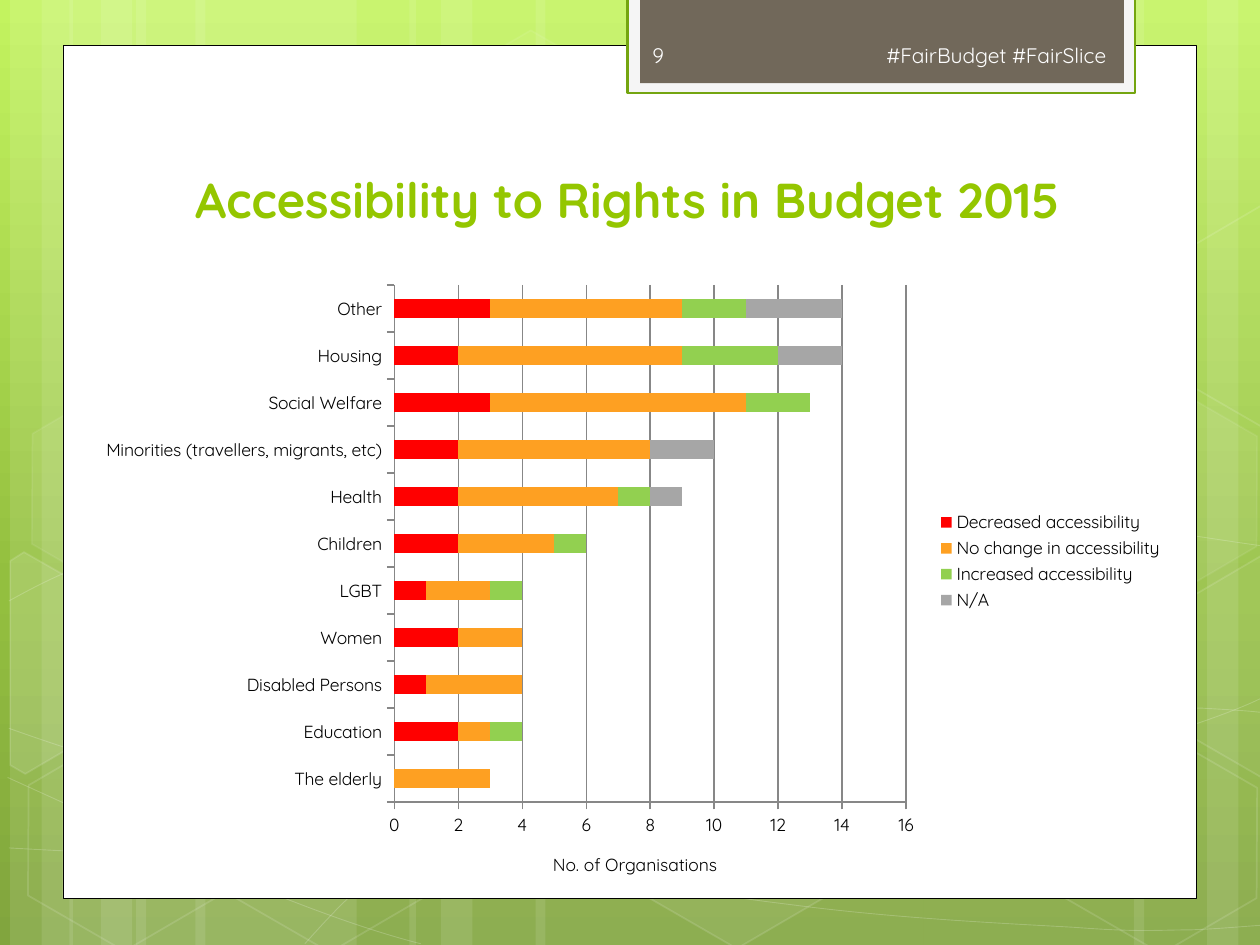
from math import cos, radians, sin

from lxml import etree
from pptx import Presentation
from pptx.chart.data import CategoryChartData
from pptx.dml.color import RGBColor
from pptx.enum.chart import XL_CHART_TYPE, XL_LEGEND_POSITION, XL_TICK_MARK
from pptx.enum.shapes import MSO_SHAPE
from pptx.enum.text import MSO_ANCHOR, PP_ALIGN
from pptx.oxml import parse_xml
from pptx.oxml.ns import nsdecls, qn
from pptx.util import Inches, Pt

RECT, HEX = MSO_SHAPE.RECTANGLE, MSO_SHAPE.HEXAGON
BARS = XL_CHART_TYPE.BAR_STACKED
RIGHT_SIDE = XL_LEGEND_POSITION.RIGHT
OUT = XL_TICK_MARK.OUTSIDE
TOP, MIDDLE, BOTTOM = MSO_ANCHOR.TOP, MSO_ANCHOR.MIDDLE, MSO_ANCHOR.BOTTOM
LEFT, CENTER, RIGHT = PP_ALIGN.LEFT, PP_ALIGN.CENTER, PP_ALIGN.RIGHT

FONT = "Quicksand"
TILT = 30
COLORS = {
    "white": "FFFFFF", "black": "000000", "pale": "F5F5F5", "soft": "FEFEFE",
    "edge": "74A510", "brown": "71685A", "title": "94C600",
    "red": "FF0000", "orange": "FEA022", "green": "92D050", "gray": "A6A6A6",
}
SKY = [(0, "C3F35F"), (62, "93BF3F"), (100, "81A53E")]

# Background bands: left, width
BANDS = [
    (1.08, 1.75), (0.08, 0.5), (0.33, 0.83), (1.55, 1.75), (0.55, 0.5), (0.8, 0.83),
    (7.33, 1.75), (9.58, 0.5), (9, 0.83), (4.25, 3.08), (3.25, 0.5), (3.5, 0.83),
]
# Bezier chains: start point, then two handles and an end point per piece
CURVES = [
    [(0.07, 6.73), (0.61, 6.76), (1.15, 6.79), (1.9, 6.78), (2.65, 6.77), (3.58, 6.75),
     (4.58, 6.65), (5.58, 6.55), (7, 6.36), (7.92, 6.17), (8.83, 5.98), (9.77, 5.68),
     (10.07, 5.51)],
    [(0.07, 4.77), (0.36, 4.61), (0.65, 4.46), (1.21, 4.31), (1.78, 4.16), (2.59, 3.94),
     (3.47, 3.87), (4.36, 3.8), (5.44, 3.79), (6.54, 3.87), (7.64, 3.95), (9.47, 4.26),
     (10.07, 4.34)],
    [(0.06, 6.17), (1.27, 6.72), (2.47, 7.27), (3.34, 7.49)],
    [(0.07, 5.78), (0.38, 5.89), (0.7, 6), (1.28, 6.16), (1.86, 6.31), (2.73, 6.56),
     (3.57, 6.73), (4.4, 6.9), (5.45, 7.08), (6.28, 7.18), (7.11, 7.29), (8, 7.33),
     (8.53, 7.36), (9.05, 7.4), (9.19, 7.38), (9.45, 7.38), (9.71, 7.37), (9.89, 7.35),
     (10.07, 7.34)],
    [(2.42, 7.49), (2.6, 7.29), (2.78, 7.09), (3.02, 6.91), (3.26, 6.73), (3.6, 6.53),
     (3.88, 6.39), (4.16, 6.25), (4.33, 6.19), (4.7, 6.09), (5.06, 5.99), (5.73, 5.85),
     (6.08, 5.78), (6.44, 5.71), (6.49, 5.71), (6.8, 5.69), (7.11, 5.66), (7.6, 5.63),
     (7.94, 5.62), (8.29, 5.61), (8.86, 5.62), (8.86, 5.62), (9.08, 5.62), (9.31, 5.62),
     (9.53, 5.62), (9.71, 5.63), (9.88, 5.64), (9.97, 5.65), (10.06, 5.66), (10.03, 5.65),
     (10.06, 5.66)],
]
# Whole hexagons: left, top, fill opacity, line opacity
CELLS = [
    (3.34, 0.36, 4, 8), (4.97, 5.89, 6, 12), (0.11, 5.91, 0, 12), (0.14, 3.12, 7, 8),
    (1.74, 5.92, 0, 12), (7.53, 4.53, 10, 12), (8.34, 5.93, 0, 12), (8.34, 3.14, 7, 8),
]
# Hexagons cut by the slide edge: turning point, corners, fill opacity
CUTS = [
    ((0.36, 5.35), [(0.08, 4.45), (0.19, 4.38), (0.96, 4.82), (0.95, 5.7), (0.2, 6.14),
                    (0.08, 6.07)], 10),
    ((9.85, 5.2), [(9.26, 4.85), (10.01, 4.41), (10.09, 4.46), (10.09, 6.13),
                   (10.02, 6.17), (9.26, 5.73)], 4),
    ((9.85, 2.41), [(9.26, 2.07), (10.01, 1.63), (10.1, 1.68), (10.09, 3.35),
                    (10.02, 3.39), (9.26, 2.95)], 0),
]
CATS = ["The elderly", "Education", "Disabled Persons", "Women", "LGBT", "Children", "Health",
        "Minorities (travellers, migrants, etc)", "Social Welfare", "Housing", "Other"]
SERIES = [
    ("Decreased accessibility", "red", [None, 2, 1, 2, 1, 2, 2, 2, 3, 2, 3]),
    ("No change in accessibility", "orange", [3, 1, 3, 2, 2, 3, 5, 6, 8, 7, 6]),
    ("Increased accessibility", "green", [None, 1, None, None, 1, 1, 1, None, 2, 3, 2]),
    ("N/A", "gray", [None] * 6 + [1, 2, None, 2, 3]),
]


def rgb(name):
    return RGBColor.from_string(COLORS[name])


def paint(fmt, name, alpha=100):
    """Give a fill a solid colour with an opacity in percent."""
    fmt.solid()
    fmt.fore_color.rgb = rgb(name)
    if alpha < 100:
        tone = fmt._xPr.find(".//" + qn("a:srgbClr"))
        etree.SubElement(tone, qn("a:alpha"), val=str(alpha * 1000))


def style(shape, fill=None, line=None, width=1, clear=100, faint=100):
    shape.shadow.inherit = False
    if fill and clear:
        paint(shape.fill, fill, clear)
    else:
        shape.fill.background()
    if line:
        shape.line.width = Pt(width)
        paint(shape.line.fill, line, faint)
    else:
        shape.line.fill.background()


def block(slide, kind, box, **look):
    shape = slide.shapes.add_shape(kind, *map(Inches, box))
    style(shape, **look)
    return shape


def trace(slide, points, close, **look):
    dots = [(Inches(x), Inches(y)) for x, y in points]
    pen = slide.shapes.build_freeform(*dots[0])
    pen.add_line_segments(dots[1:], close=close)
    shape = pen.convert_to_shape()
    style(shape, **look)
    return shape


def bend(shape):
    """Turn each three line segments into one cubic Bezier piece."""
    legs = list(shape.element.iter(qn("a:lnTo")))
    for i in range(0, len(legs), 3):
        legs[i].tag = qn("a:cubicBezTo")
        for leg in legs[i + 1:i + 3]:
            legs[i].append(leg[0])
            leg.getparent().remove(leg)


def unturn(point, hub):
    """Position of a point before the shape is tilted around its hub."""
    dx, dy = point[0] - hub[0], point[1] - hub[1]
    c, s = cos(radians(TILT)), sin(radians(TILT))
    return hub[0] + dx * c + dy * s, hub[1] - dx * s + dy * c


def write(slide, box, text, size, color, align=LEFT, anchor=MIDDLE, bold=False):
    frame = slide.shapes.add_textbox(*map(Inches, box)).text_frame
    frame.word_wrap = True
    frame.vertical_anchor = anchor
    para = frame.paragraphs[0]
    para.alignment = align
    run = para.add_run()
    run.text = text
    font = run.font
    font.name, font.size, font.bold = FONT, Pt(size), bold
    font.color.rgb = rgb(color)


def backdrop(slide, high):
    # Gradient
    fill = slide.background.fill
    fill.gradient()
    fill.gradient_angle = 270
    stops = slide.element.find(".//" + qn("a:gsLst"))
    for old in list(stops):
        stops.remove(old)
    for pos, tone in SKY:
        stop = etree.SubElement(stops, qn("a:gs"), pos=str(pos * 1000))
        etree.SubElement(stop, qn("a:srgbClr"), val=tone)
    # Bands, curves and hexagons
    for left, wide in BANDS:
        block(slide, RECT, (left, 0, wide, high), fill="white", clear=10)
    for chain in CURVES:
        bend(trace(slide, chain, False, line="white", width=0.5, faint=20))
    for left, top, clear, faint in CELLS:
        cell = block(slide, HEX, (left, top, 1.75, 1.52), fill="white", clear=clear,
                     line="white", faint=faint)
        cell.adjustments[0] = 0.285
        cell.rotation = TILT
    for hub, points, clear in CUTS:
        cut = trace(slide, [unturn(p, hub) for p in points], True, fill="white",
                    clear=clear, line="white", faint=12)
        cut.rotation = TILT


def banner(slide, x, y, w, h):
    block(slide, RECT, (x, y, w, h), fill="pale", line="edge", width=1.25)
    block(slide, RECT, (x + 0.1, y, w - 0.19, h - 0.08), fill="brown")
    write(slide, (x + 1.57, y + 0.26, 2.33, 0.4), "#FairBudget #FairSlice", 12, "soft", RIGHT)
    write(slide, (x + 0.1, y + 0.26, 1.46, 0.4), "9", 12, "soft")


def graph(slide, x, y, w, h):
    data = CategoryChartData()
    data.categories = CATS
    for name, _, vals in SERIES:
        data.add_series(name, vals)
    chart = slide.shapes.add_chart(BARS, *map(Inches, (x, y, w, h)), data).chart
    chart.has_title = False
    chart.font.name, chart.font.size = FONT, Pt(10)
    chart.font.color.rgb = rgb("black")
    plot = chart.plots[0]
    plot.gap_width, plot.overlap, plot.vary_by_categories = 150, 100, False
    for series, (_, tone, _) in zip(plot.series, SERIES):
        paint(series.format.fill, tone)
    # Axes and legend
    axis = chart.value_axis
    axis.minimum_scale, axis.maximum_scale, axis.major_unit = 0, 16, 2
    axis.has_major_gridlines = True
    axis.major_tick_mark = chart.category_axis.major_tick_mark = OUT
    chart.has_legend = True
    chart.legend.position = RIGHT_SIDE
    chart.legend.include_in_layout = False
    # Plot area as shares of the chart box
    area = chart.element.find(".//" + qn("c:plotArea"))
    for old in area.findall(qn("c:layout")):
        area.remove(old)
    spots = {"layoutTarget": "inner", "xMode": "edge", "yMode": "edge",
             "x": 0.284, "y": 0.018, "w": 0.469, "h": 0.902}
    inner = "".join(f'<c:{key} val="{val}"/>' for key, val in spots.items())
    area.insert(0, parse_xml(f'<c:layout {nsdecls("c")}><c:manualLayout>{inner}'
                             "</c:manualLayout></c:layout>"))
    write(slide, (x + 3.62, y + h, 1.81, 0.44), "No. of Organisations", 10, "black", anchor=TOP)


def main():
    deck = Presentation()
    deck.slide_width, deck.slide_height = Inches(10), Inches(7.5)
    slide = deck.slides.add_slide(deck.slide_layouts[6])
    backdrop(slide, 7.5)
    block(slide, RECT, (0.5, 0.36, 9, 6.77), fill="white", line="black", width=0.5)
    banner(slide, 4.98, -0.02, 4.03, 0.76)
    write(slide, (1.14, 1.12, 7.68, 0.74), "Accessibility to Rights in Budget 2015", 28,
          "title", CENTER, BOTTOM, True)
    graph(slide, 0.67, 2.18, 8.66, 4.55)
    deck.save("out.pptx")


if __name__ == "__main__":
    main()
